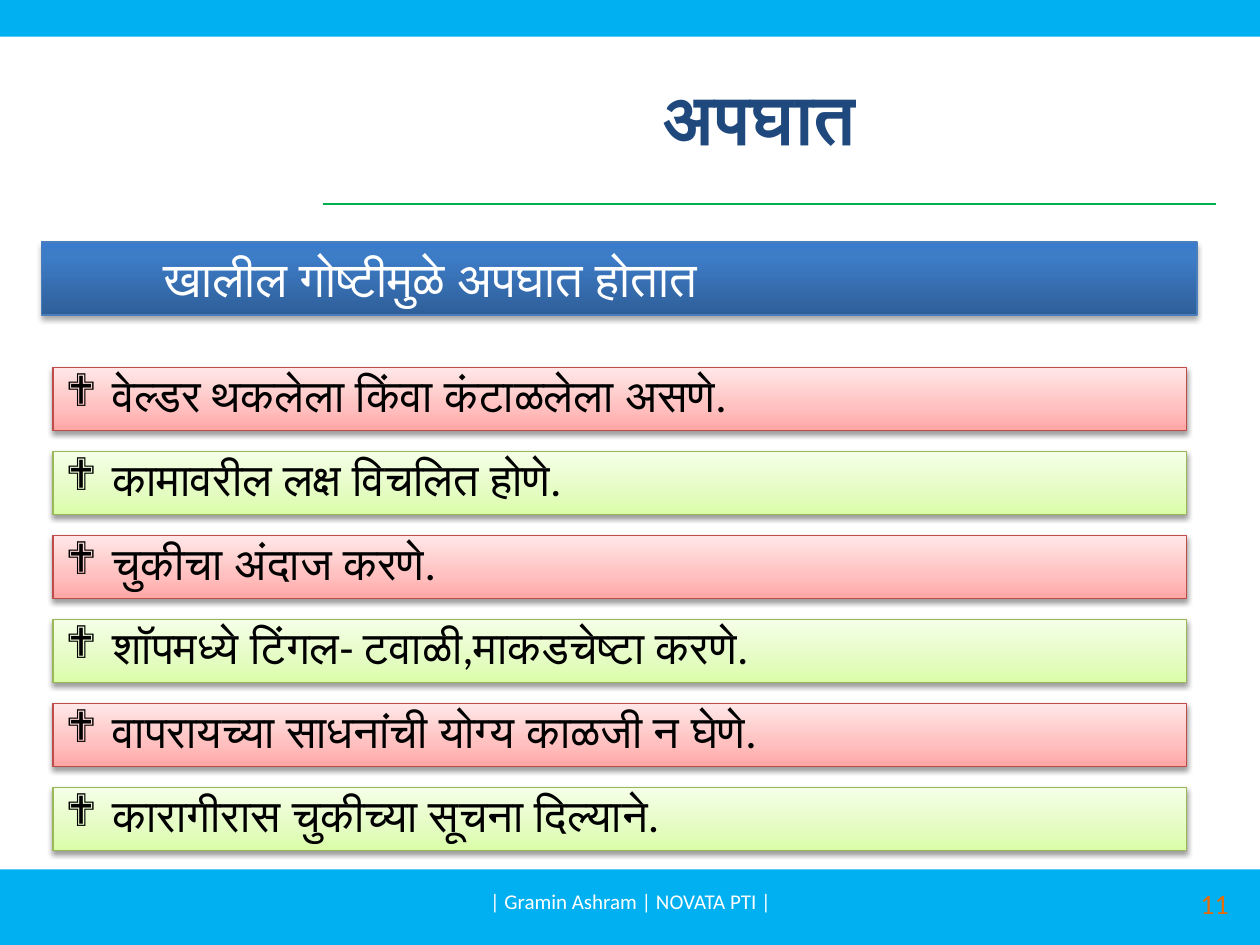
from dataclasses import dataclass

from lxml.etree import SubElement
from pptx import Presentation
from pptx.dml.color import RGBColor
from pptx.enum.shapes import MSO_CONNECTOR, MSO_SHAPE
from pptx.enum.text import MSO_ANCHOR, PP_ALIGN
from pptx.oxml.ns import qn
from pptx.util import Pt

FONT = "Calibri"
SKY = "00B0F0"
WHITE = "FFFFFF"


@dataclass(frozen=True)
class Box:
    left: float
    top: float
    width: float
    height: float

    def lengths(self) -> tuple:
        return tuple(Pt(v) for v in (self.left, self.top, self.width, self.height))


@dataclass(frozen=True)
class PanelStyle:
    stops: tuple
    border: str
    shadow_opacity: int
    shadow_distance: float


HEADING = PanelStyle(((0, "2F5F99"), (80, "3D7CC7"), (100, "3A7CCB")), "4B7EBC", 35, 1.8)
RED = PanelStyle(((0, "FFA6A5"), (35, "FFC0BF"), (100, "FFE7E7")), "BF4C48", 38, 1.6)
GREEN = PanelStyle(((0, "DAFDA7"), (35, "E4FCC2"), (100, "F5FFE7")), "98B955", 38, 1.6)

CAUSES = (
    "वेल्डर थकलेला किंवा कंटाळलेला असणे.",
    "कामावरील लक्ष विचलित होणे.",
    "चुकीचा अंदाज करणे.",
    "शॉपमध्ये टिंगल- टवाळी,माकडचेष्टा करणे.",
    "वापरायच्या साधनांची योग्य काळजी न घेणे.",
    "कारागीरास चुकीच्या सूचना दिल्याने.",
)
FIRST_CAUSE = Box(30.24, 210, 648, 36)
CAUSE_PITCH = 48


def color(hex_value: str) -> RGBColor:
    return RGBColor.from_string(hex_value)


def write(shape, text: str, size: float, hex_value: str, align=PP_ALIGN.LEFT,
          anchor=MSO_ANCHOR.TOP, bold: bool = False, bullet: str = ""):
    frame = shape.text_frame
    frame.word_wrap = True
    frame.vertical_anchor = anchor
    frame.text = text
    paragraph = frame.paragraphs[0]
    paragraph.alignment = align
    if bullet:
        paragraph.line_spacing = 0.9
        properties = paragraph._p.get_or_add_pPr()
        properties.set("marL", str(Pt(27)))
        properties.set("indent", str(-Pt(27)))
        SubElement(properties, qn("a:buFont"), typeface="Wingdings")
        SubElement(properties, qn("a:buChar"), char=bullet)
    font = paragraph.font
    font.name, font.size, font.bold = FONT, Pt(size), bold
    font.color.rgb = color(hex_value)


def add_band(slide, box: Box):
    band = slide.shapes.add_shape(MSO_SHAPE.RECTANGLE, *box.lengths())
    band.shadow.inherit = False
    band.fill.solid()
    band.fill.fore_color.rgb = color(SKY)
    band.line.fill.background()


def add_panel(slide, box: Box, style: PanelStyle):
    panel = slide.shapes.add_shape(MSO_SHAPE.RECTANGLE, *box.lengths())
    panel.fill.gradient()
    panel.fill.gradient_angle = 90
    properties = panel._element.spPr
    stop_list = properties.find(qn("a:gradFill")).find(qn("a:gsLst"))
    for stop in list(stop_list):
        stop_list.remove(stop)
    for position, hex_value in style.stops:
        stop = SubElement(stop_list, qn("a:gs"), pos=str(position * 1000))
        SubElement(stop, qn("a:srgbClr"), val=hex_value)
    panel.line.color.rgb = color(style.border)
    panel.line.width = Pt(0.75)
    panel.shadow.inherit = False
    shadow = SubElement(properties.find(qn("a:effectLst")), qn("a:outerShdw"),
                        blurRad=str(Pt(3.1)), dist=str(Pt(style.shadow_distance)),
                        dir="5400000", rotWithShape="0")
    shade = SubElement(shadow, qn("a:srgbClr"), val="000000")
    SubElement(shade, qn("a:alpha"), val=str(style.shadow_opacity * 1000))
    return panel


def add_rule(slide, left: float, right: float, top: float):
    rule = slide.shapes.add_connector(MSO_CONNECTOR.STRAIGHT, Pt(left), Pt(top), Pt(right), Pt(top))
    rule.line.color.rgb = color("00B050")
    rule.line.width = Pt(0.75)
    SubElement(rule._element.spPr, qn("a:effectLst"))


def main():
    deck = Presentation()
    deck.slide_width, deck.slide_height = Pt(720), Pt(540)
    slide = deck.slides.add_slide(deck.slide_layouts[5])

    add_band(slide, Box(0, 496.8, 720, 43.2))
    add_rule(slide, 184.32, 694.8, 116.64)
    add_band(slide, Box(0, 0, 720, 20.88))

    title = slide.shapes.title
    title.left, title.top, title.width, title.height = Box(184.32, 21.6, 510.48, 90).lengths()
    write(title, "अपघात ", 40, "1F497D", PP_ALIGN.CENTER, MSO_ANCHOR.MIDDLE, bold=True)

    heading = add_panel(slide, Box(23.76, 138.24, 660.24, 41.76), HEADING)
    write(heading, "खालील गोष्टीमुळे अपघात होतात", 28, WHITE)
    heading.text_frame.margin_left = Pt(69.5)

    footer = slide.shapes.add_textbox(*Box(246.24, 500.4, 228.24, 28.8).lengths())
    write(footer, "| Gramin Ashram | NOVATA PTI |", 12, WHITE, PP_ALIGN.CENTER, MSO_ANCHOR.MIDDLE)
    page_number = slide.shapes.add_textbox(*Box(541.44, 501.84, 167.76, 28.8).lengths())
    write(page_number, "11", 16, "E46C0A", PP_ALIGN.RIGHT, MSO_ANCHOR.MIDDLE)

    for row, cause in enumerate(CAUSES):
        box = Box(FIRST_CAUSE.left, FIRST_CAUSE.top + row * CAUSE_PITCH,
                  FIRST_CAUSE.width, FIRST_CAUSE.height)
        panel = add_panel(slide, box, GREEN if row % 2 else RED)
        write(panel, cause, 25.9, "000000", bullet="❖")

    deck.save("out.pptx")


if __name__ == "__main__":
    main()
